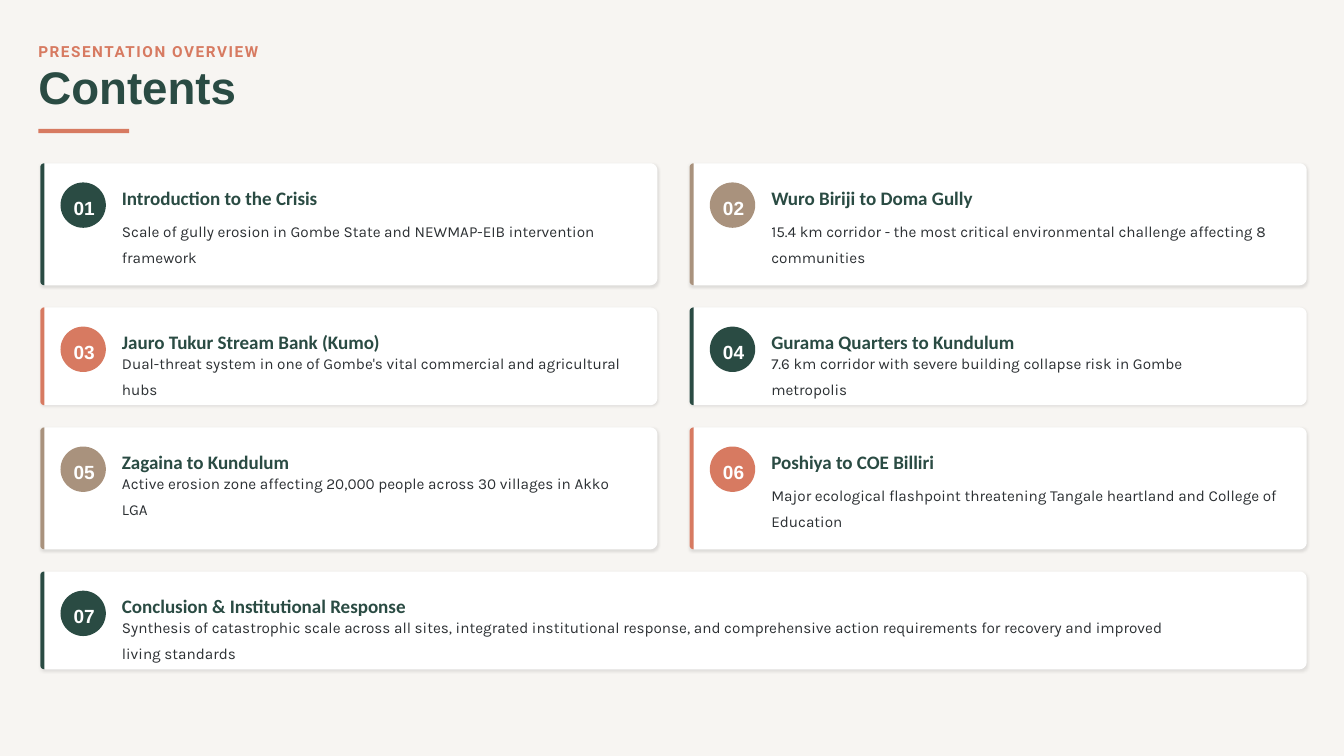
import math
from dataclasses import dataclass

from lxml import etree
from pptx import Presentation, util as u
from pptx.dml.color import RGBColor
from pptx.enum import shapes, text
from pptx.oxml.ns import qn

WIDE, HIGH = 13.33, 7.5
EDGE, TOP = 0.4, 1.62
PITCH, GUT, GAP = 6.44, 0.32, 0.22
ROWS = [1.43, 1.19, 1.43, 1.19]
DISC, LINE = 0.45, 0.24

GREEN, TAN, CORAL = "2A4B43", "A9927D", "D77A61"
INK, WHITE, PAPER = "2C3033", "FFFFFF", "F7F5F2"


@dataclass
class Box:
    x: float
    y: float
    w: float
    h: float

    def emu(self) -> list:
        return [u.Inches(v) for v in (self.x, self.y, self.w, self.h)]


@dataclass
class Type:
    face: str
    size: float
    color: str
    lead: float
    bold: bool = True
    center: bool = False
    track: int = 0


@dataclass
class Card:
    col: int
    row: int
    color: str
    title: str
    body: str
    wrap: float = 5.2
    lines: int = 1
    span: int = 1

    def box(self) -> Box:
        return Box(EDGE + self.col * PITCH, TOP + sum(ROWS[:self.row]),
                   self.span * PITCH - GUT, ROWS[self.row] - GAP)


KICK = Type("Roboto", 10.9, CORAL, 1.2, track=110)
HEAD = Type("Arial", 32.6, GREEN, 0.8)
NUM = Type("Arial", 13.6, WHITE, 1.2, center=True)
NAME = Type("Calibri", 13.6, GREEN, 1.2)
BODY = Type("Karla", 10.9, INK, 1.4, bold=False)

CARDS = [
    Card(0, 0, GREEN, "Introduction to the Crisis",
         "Scale of gully erosion in Gombe State and NEWMAP-EIB intervention framework", lines=2),
    Card(1, 0, TAN, "Wuro Biriji to Doma Gully",
         "15.4 km corridor - the most critical environmental challenge affecting 8 communities",
         lines=2),
    Card(0, 1, CORAL, "Jauro Tukur Stream Bank (Kumo)",
         "Dual-threat system in one of Gombe's vital commercial and agricultural hubs", 5.06),
    Card(1, 1, GREEN, "Gurama Quarters to Kundulum",
         "7.6 km corridor with severe building collapse risk in Gombe metropolis", 4.65),
    Card(0, 2, TAN, "Zagaina to Kundulum",
         "Active erosion zone affecting 20,000 people across 30 villages in Akko LGA", 4.98),
    Card(1, 2, CORAL, "Poshiya to COE Billiri",
         "Major ecological flashpoint threatening Tangale heartland and College of Education",
         lines=2),
    Card(0, 3, GREEN, "Conclusion & Institutional Response",
         "Synthesis of catastrophic scale across all sites, integrated institutional response, "
         "and comprehensive action requirements for recovery and improved living standards",
         10.74, span=2),
]


def tint(code: str) -> RGBColor:
    return RGBColor.from_string(code)


def paint(shape, color: str) -> None:
    shape.fill.solid()
    shape.fill.fore_color.rgb = tint(color)
    shape.line.fill.background()
    shape.shadow.inherit = False


def write(slide, box: Box, words: str, kind: Type) -> None:
    frame = slide.shapes.add_textbox(*box.emu()).text_frame
    frame.word_wrap = True
    frame.vertical_anchor = text.MSO_ANCHOR.MIDDLE
    frame.margin_left = frame.margin_right = frame.margin_top = frame.margin_bottom = 0
    para = frame.paragraphs[0]
    para.text = words
    para.line_spacing = kind.lead
    if kind.center:
        para.alignment = text.PP_ALIGN.CENTER
    font = para.font
    font.name, font.size, font.bold = kind.face, u.Pt(kind.size), kind.bold
    font.color.rgb = tint(kind.color)
    if kind.track:
        para.runs[0].font._element.set("spc", str(kind.track))


def pill(slide, box: Box, color: str, bend: float) -> None:
    shape = slide.shapes.add_shape(shapes.MSO_SHAPE.ROUNDED_RECTANGLE, *box.emu())
    shape.adjustments[0] = bend
    paint(shape, color)


def panel(slide, box: Box, color: str, left: float, right: float):
    far, low = box.x + box.w, box.y + box.h
    turns = [(far - right, box.y + right, right, -90), (far - right, low - right, right, 0),
             (box.x + left, low - left, left, 90), (box.x + left, box.y + left, left, 180)]
    dots = []
    for x, y, bend, start in turns:
        for step in range(0, 91, 15) if bend else [0]:
            turn = math.radians(start + step)
            dots.append((u.Inches(x + bend * math.cos(turn)),
                         u.Inches(y + bend * math.sin(turn))))
    pen = slide.shapes.build_freeform(*dots[0], scale=1.0)
    pen.add_line_segments(dots[1:], close=True)
    shape = pen.convert_to_shape()
    paint(shape, color)
    return shape


def shade(shape) -> None:
    list_ = shape._element.spPr.find(qn("a:effectLst"))
    drop = etree.SubElement(list_, qn("a:outerShdw"), blurRad=str(u.Pt(2)),
                            dist=str(u.Pt(0.7)), dir="5400000", rotWithShape="0")
    hue = etree.SubElement(drop, qn("a:srgbClr"), val="000000")
    etree.SubElement(hue, qn("a:alpha"), val="10000")


def draw(slide, card: Card, num: int) -> None:
    box = card.box()
    x, y = box.x, box.y + 0.19
    shade(panel(slide, box, WHITE, 0.04, 0.07))
    panel(slide, Box(x, box.y, 0.04, box.h), card.color, 0.04, 0)
    pill(slide, Box(x + 0.2, y, DISC, DISC), card.color, 0.5)
    write(slide, Box(x + 0.16, y, 0.55, DISC), f"{num:02}", NUM)
    write(slide, Box(x + 0.81, y, card.wrap, 0.26), card.title, NAME)
    write(slide, Box(x + 0.81, y + 0.34, card.wrap, LINE * card.lines), card.body, BODY)


def main() -> None:
    deck = Presentation()
    deck.slide_width, deck.slide_height = u.Inches(WIDE), u.Inches(HIGH)
    slide = deck.slides.add_slide(deck.slide_layouts[6])
    slide.background.fill.solid()
    slide.background.fill.fore_color.rgb = tint(PAPER)
    write(slide, Box(0.38, 0.38, 12.65, 0.23), "PRESENTATION OVERVIEW", KICK)
    write(slide, Box(0.38, 0.68, 12.81, 0.45), "Contents", HEAD)
    pill(slide, Box(0.38, 1.28, 0.9, 0.04), CORAL, 0)
    for num, card in enumerate(CARDS, 1):
        draw(slide, card, num)
    deck.save("out.pptx")


if __name__ == "__main__":
    main()
